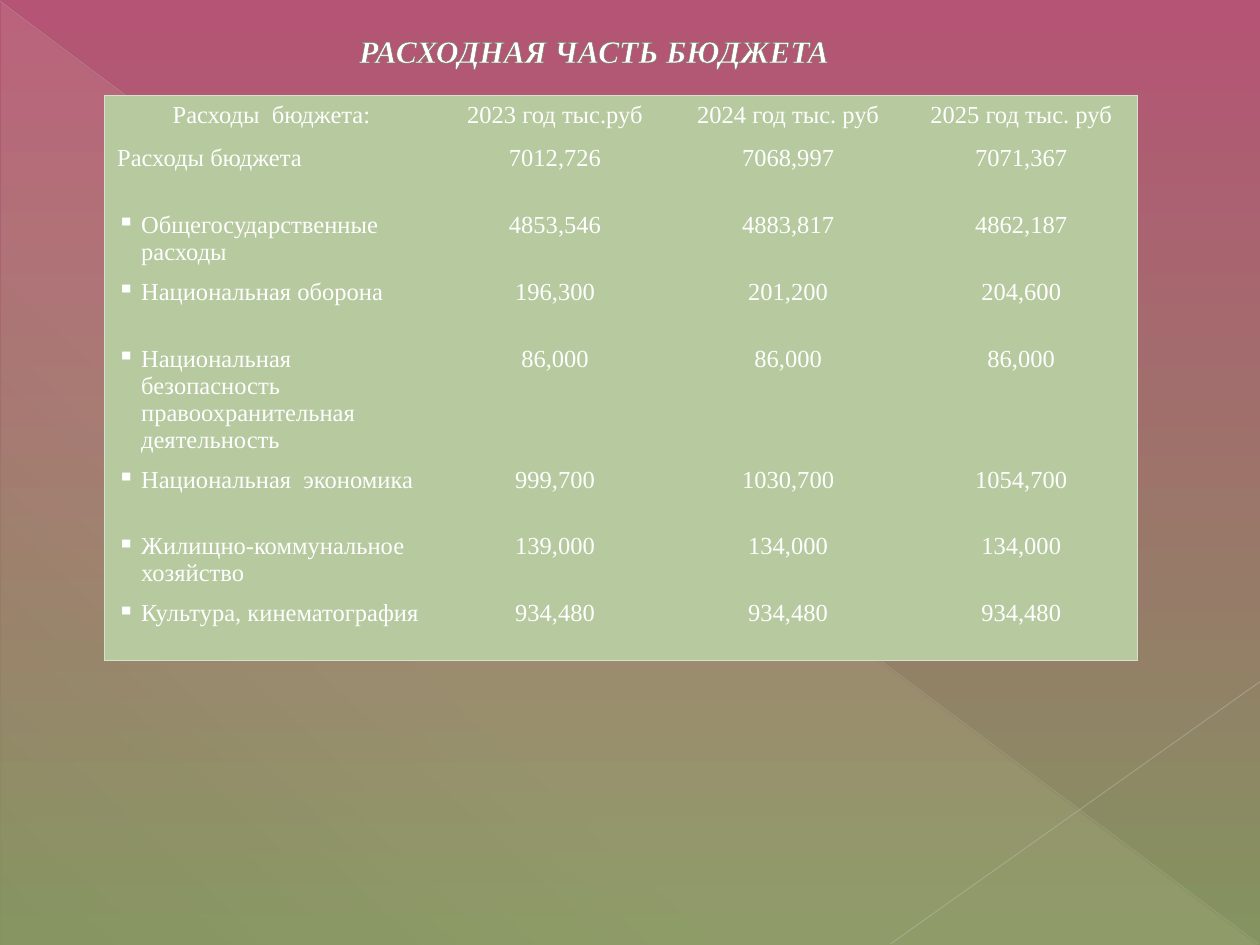
from lxml import etree
from copy import deepcopy
from pptx import Presentation
from pptx.dml.color import RGBColor
from pptx.enum import shapes, text
from pptx.oxml.ns import qn
from pptx.util import Inches, Pt

WHITE = "FFFFFF"
FONT = "Times New Roman"
NO_STYLE = "{2D5ABB26-0587-4C30-8999-92F81FD0307C}"


def paint(color, value, alpha=None):
    """Set a colour format to a hex value, with opacity in percent if given."""
    color.rgb = RGBColor.from_string(value)
    if alpha is not None:
        srgb = color._color._xClr
        etree.SubElement(srgb, qn("a:alpha"), val=str(alpha * 1000))


def add_outline(parent, tag, value, width):
    line = etree.SubElement(parent, qn(tag), w=str(Pt(width)))
    fill = etree.SubElement(line, qn("a:solidFill"))
    etree.SubElement(fill, qn("a:srgbClr"), val=value)
    return line


prs = Presentation()
prs.slide_width, prs.slide_height = Inches(10), Inches(7.5)
slide = prs.slides.add_slide(prs.slide_layouts[5])

# Background
backdrop = slide.background.fill
backdrop.gradient()
backdrop.gradient_angle = 270
for stop, value, position in zip(backdrop.gradient_stops, ("B55475", "849360"), (0, 1)):
    paint(stop.color, value)
    stop.position = position

triangle = slide.shapes.add_shape(
    shapes.MSO_SHAPE.RIGHT_TRIANGLE, Inches(0.01), Inches(0.02), Inches(9.98), Inches(7.48))
triangle.shadow.inherit = False
triangle.line.fill.background()
triangle.fill.gradient()
triangle.fill.gradient_angle = 227
stop_list = triangle._element.spPr.find(".//" + qn("a:gsLst"))
stop_list.append(deepcopy(stop_list[-1]))
for stop, position, alpha in zip(triangle.fill.gradient_stops, (0, 0.7, 1), (10, 8, 1)):
    paint(stop.color, "FEFAC9", alpha)
    stop.position = position

for x1, y1, x2, y2, value, width, alpha in (
    (0, 0.01, 9.99, 7.49, "BABDB3", 0.39, 35),
    (10, 5.41, 7.07, 7.49, "C1C4BC", 0.47, 45),
):
    diagonal = slide.shapes.add_connector(
        shapes.MSO_CONNECTOR.STRAIGHT, Inches(x1), Inches(y1), Inches(x2), Inches(y2))
    diagonal.line.width = Pt(width)
    paint(diagonal.line.color, value, alpha)
    etree.SubElement(diagonal._element.spPr, qn("a:effectLst"))

# Title, brought in front of the background shapes
title = slide.shapes.title
slide.shapes._spTree.append(title._element)
title.left, title.top = Inches(2.55), Inches(0.21)
title.width, title.height = Inches(7.45), Inches(0.39)
title.text_frame.vertical_anchor = text.MSO_ANCHOR.BOTTOM
heading = title.text_frame.paragraphs[0]
heading.text = "РАСХОДНАЯ ЧАСТЬ БЮДЖЕТА"
heading.alignment = text.PP_ALIGN.LEFT
heading._p.get_or_add_pPr().set("marL", str(Inches(0.2)))
heading_font = heading.runs[0].font  # a text outline only works on the run
add_outline(heading_font._element, "a:ln", "727D65", 0.5)
heading_font.name, heading_font.size = FONT, Pt(18)
heading_font.bold = heading_font.italic = True
paint(heading_font.fill.solid() or heading_font.fill.fore_color, WHITE)

# Budget table
budget = [
    ("Расходы  бюджета:", "2023 год тыс.руб", "2024 год тыс. руб", "2025 год тыс. руб"),
    ("Расходы бюджета", "7012,726", "7068,997", "7071,367"),
    ("Общегосударственные расходы", "4853,546", "4883,817", "4862,187"),
    ("Национальная оборона", "196,300", "201,200", "204,600"),
    ("Национальная безопасность правоохранительная деятельность",
     "86,000", "86,000", "86,000"),
    ("Национальная  экономика", "999,700", "1030,700", "1054,700"),
    ("Жилищно-коммунальное хозяйство", "139,000", "134,000", "134,000"),
    ("Культура, кинематография", "934,480", "934,480", "934,480"),
]
column_widths = [2.65, 1.85, 1.85, 1.85]
row_heights = [0.34, 0.53, 0.53, 0.53, 0.96, 0.53, 0.53, 0.53]
last_row, last_column = len(budget) - 1, len(column_widths) - 1

table = slide.shapes.add_table(
    len(budget), len(column_widths), Inches(0.83), Inches(0.76),
    Inches(sum(column_widths)), Inches(sum(row_heights))).table
table.first_row = table.horz_banding = False
table._tbl.tblPr.find(qn("a:tableStyleId")).text = NO_STYLE
for column, width in zip(table.columns, column_widths):
    column.width = Inches(width)
for row, height in zip(table.rows, row_heights):
    row.height = Inches(height)

for r, entries in enumerate(budget):
    for c, entry in enumerate(entries):
        cell = table.cell(r, c)
        cell_props = cell._tc.get_or_add_tcPr()
        for tag, on_edge in (("a:lnL", c == 0), ("a:lnR", c == last_column),
                             ("a:lnT", r == 0), ("a:lnB", r == last_row)):
            if on_edge:
                add_outline(cell_props, tag, "D8DFD1", 0.75)
        cell.fill.solid()
        paint(cell.fill.fore_color, "B6C99F")

        paragraph = cell.text_frame.paragraphs[0]
        paragraph.text = entry
        if r == 0 or c > 0:
            paragraph.alignment = text.PP_ALIGN.CENTER
        elif r > 1:
            indent = Inches(0.19)
            props = paragraph._p.get_or_add_pPr()
            props.set("marL", str(indent))
            props.set("indent", str(-indent))
            etree.SubElement(props, qn("a:buChar"), char="▪")
        paragraph.font.name, paragraph.font.size = FONT, Pt(14)
        paint(paragraph.font.color, WHITE)

prs.save("out.pptx")
